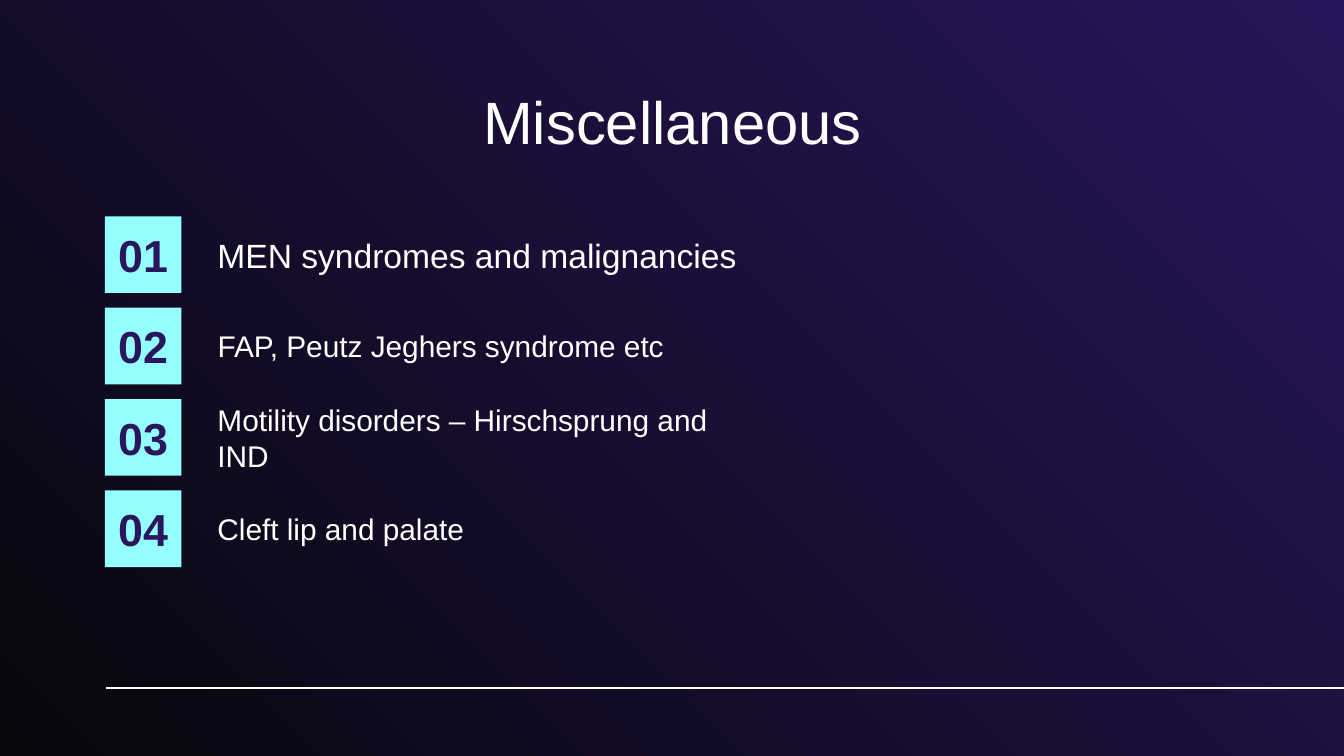
from pptx import Presentation
from pptx.dml.color import RGBColor
from pptx.enum.shapes import MSO_CONNECTOR, MSO_SHAPE
from pptx.enum.text import MSO_ANCHOR, PP_ALIGN
from pptx.oxml.ns import qn
from pptx.util import Inches, Pt
from lxml import etree

RECT = MSO_SHAPE.RECTANGLE
LINE = MSO_CONNECTOR.STRAIGHT
MIDDLE = MSO_ANCHOR.MIDDLE
LEFT, CENTER = PP_ALIGN.LEFT, PP_ALIGN.CENTER

COLORS = {"dark": "08070D", "purple": "29155A", "cyan": "95FFFF",
          "ink": "2A165D", "white": "FFFFFF"}
TOPICS = [
    ("MEN syndromes and malignancies", 18, 4.24),
    ("FAP, Peutz Jeghers syndrome etc", 16, 5.22),
    ("Motility disorders – Hirschsprung and IND", 16, 4.14),
    ("Cleft lip and palate", 16, 3.23),
]
WIDTH = 10
HEIGHT = WIDTH * 9 / 16
SIDE = 0.57
PITCH = 0.68
INDENT = 0.74


def color(name):
    return RGBColor.from_string(COLORS[name])


def write(shape, text, size, tint, align, bold=False, wrap=True, right=0.1):
    frame = shape.text_frame
    frame.text = text
    frame.word_wrap = wrap
    frame.vertical_anchor = MIDDLE
    frame.margin_left = frame.margin_top = frame.margin_bottom = Inches(0.1)
    frame.margin_right = Inches(right)
    para = frame.paragraphs[0]
    para.alignment = align
    font = para.font
    font.name, font.size, font.bold = "Arial", Pt(size), bold
    font.color.rgb = color(tint)


def add_back(slide):
    fill = slide.background.fill
    fill.gradient()
    fill.gradient_angle = 45
    for stop, name, pos in zip(fill.gradient_stops, ("dark", "purple"), (0, 1)):
        stop.color.rgb = color(name)
        stop.position = pos


def add_rule(slide, x, y, width):
    rule = slide.shapes.add_connector(
        LINE, Inches(x + width), Inches(y), Inches(x), Inches(y))
    rule.line.color.rgb = color("white")
    rule.line.width = Pt(0.75)
    etree.SubElement(rule._element.spPr, qn("a:effectLst"))


def add_title(slide, x, y, width, height):
    title = slide.shapes.title
    title.left, title.top = Inches(x), Inches(y)
    title.width, title.height = Inches(width), Inches(height)
    write(title, "Miscellaneous", 32, "white", CENTER)


def add_topic(slide, x, y, number, text, size, width):
    badge = slide.shapes.add_shape(
        RECT, Inches(x), Inches(y), Inches(SIDE), Inches(SIDE))
    badge.shadow.inherit = False
    badge.fill.solid()
    badge.fill.fore_color.rgb = color("cyan")
    badge.line.fill.background()
    write(badge, f"{number:02}", 24, "ink", CENTER, bold=True, wrap=False)
    label = slide.shapes.add_textbox(
        Inches(x + INDENT), Inches(y), Inches(width), Inches(SIDE))
    write(label, text, size, "white", LEFT, right=0)


def add_list(slide, x, y):
    for row, topic in enumerate(TOPICS):
        add_topic(slide, x, y + row * PITCH, row + 1, *topic)


def main():
    deck = Presentation()
    deck.slide_width, deck.slide_height = Inches(WIDTH), Inches(HEIGHT)
    slide = deck.slides.add_slide(deck.slide_layouts[5])
    add_back(slide)
    add_rule(slide, 0.79, 5.12, 9.27)
    add_title(slide, 0.79, 0.59, 8.43, 0.62)
    add_list(slide, 0.78, 1.61)
    deck.save("out.pptx")


if __name__ == "__main__":
    main()
